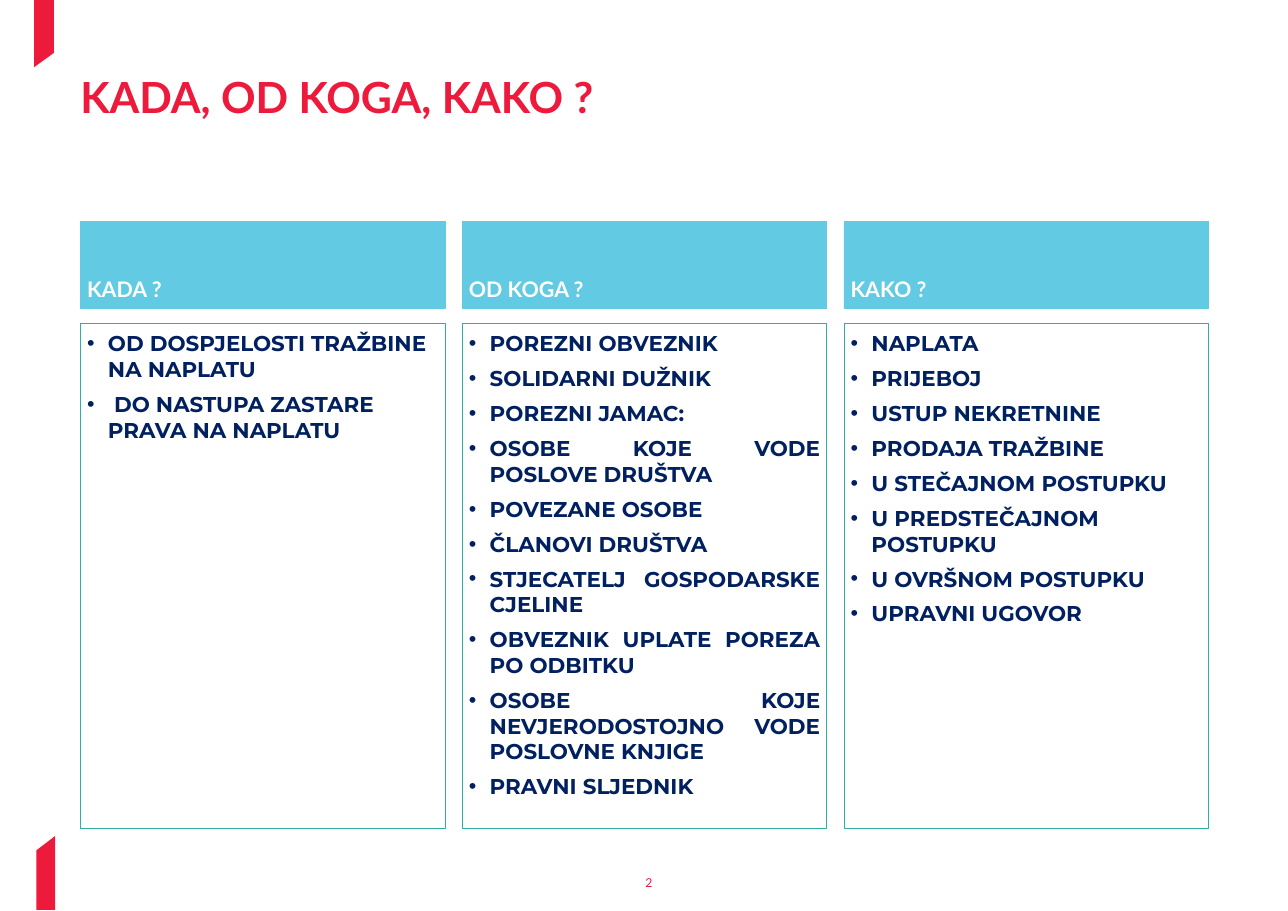
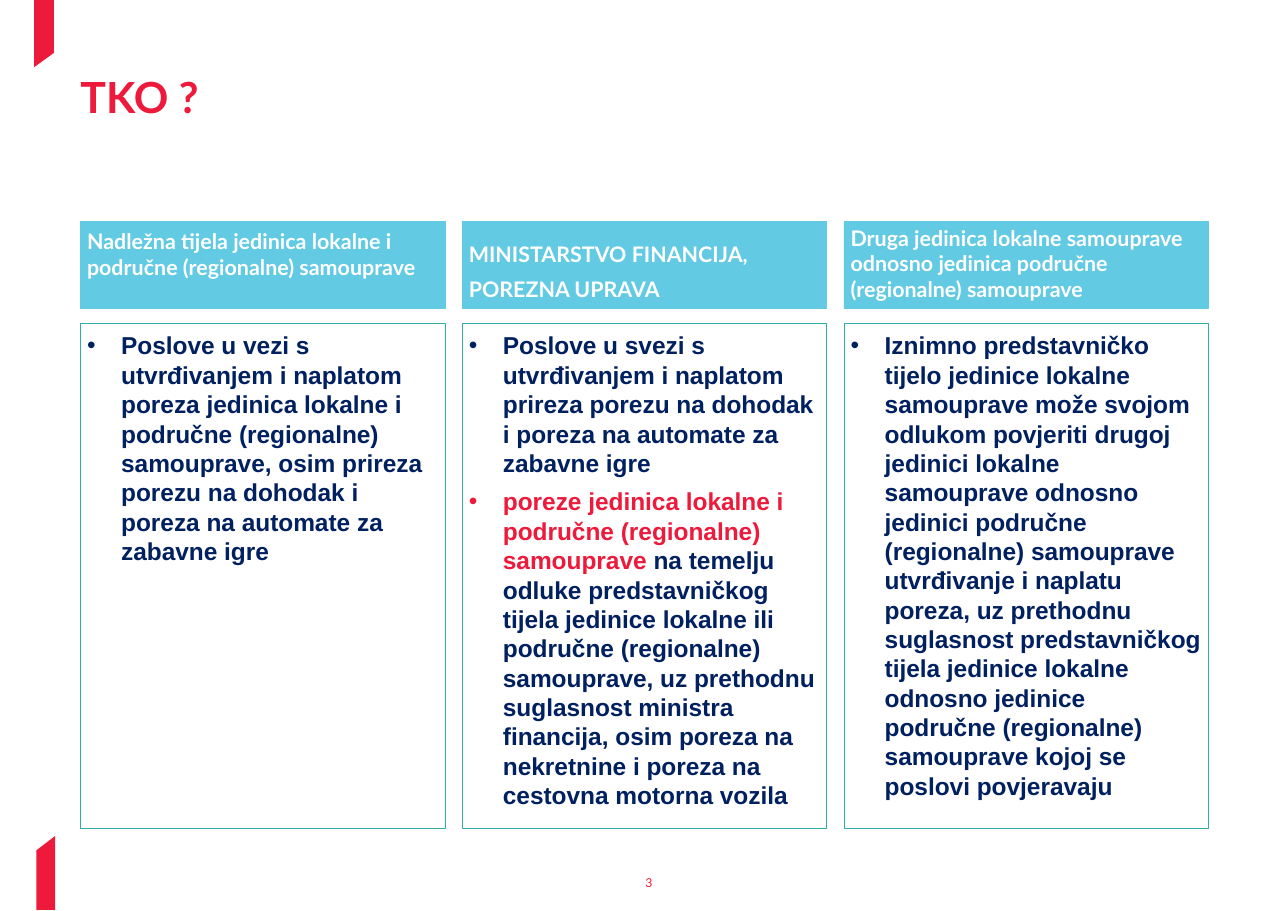
from dataclasses import dataclass

from lxml import etree
from pptx import Presentation
from pptx.dml.color import RGBColor
from pptx.enum.shapes import MSO_SHAPE
from pptx.enum.text import MSO_ANCHOR, PP_ALIGN
from pptx.oxml.ns import qn
from pptx.util import Inches, Pt

RECTANGLE = MSO_SHAPE.RECTANGLE
TOP, MIDDLE, BOTTOM = MSO_ANCHOR.TOP, MSO_ANCHOR.MIDDLE, MSO_ANCHOR.BOTTOM
LEFT, CENTER, JUSTIFY = PP_ALIGN.LEFT, PP_ALIGN.CENTER, PP_ALIGN.JUSTIFY


@dataclass(frozen=True)
class Style:
    """A font with its size, colour and weight."""
    font: str
    size: int
    color: str
    bold: bool = True


@dataclass(frozen=True)
class Theme:
    """Colours and type sizes shared by all slides."""
    red: str = "ED1A3B"
    sky: str = "62CAE3"
    teal: str = "2EB0A4"
    title: Style = Style("Lato", 28, "ED1A3B")
    header: Style = Style("Lato", 14, "FFFFFF")
    short_list: Style = Style("Montserrat", 14, "002060")
    long_list: Style = Style("Arial", 16, "002060")
    page_number: Style = Style("Lato", 8, "ED1A3B", False)
    line: float = 0.5
    space: int = 6
    inset: float = 0.06


@dataclass(frozen=True)
class Column:
    """A header and the bullets below it."""
    header: tuple
    bullets: tuple
    align: PP_ALIGN = LEFT
    anchor: MSO_ANCHOR = BOTTOM


THEME = Theme()
SLIDE_SIZE = (11.69, 8.27)
TITLE_BOX = (0.73, 0.73, 10.24, 0.38)
COLUMNS_BOX = (0.73, 2.01, 10.24, 5.51)
NUMBER_BOX = (5.82, 7.95, 0.14, 0.13)
COLUMN_GAP = 0.155
HEADER_HEIGHT = 0.79
HEADER_GAP = 0.14
MARKERS = (
    ((0.49, 0.48), (0.49, 0), (0.31, 0), (0.31, 0.61)),
    ((0.33, 7.72), (0.33, 8.26), (0.5, 8.26), (0.5, 7.59)),
)

WHEN_WHOM_HOW = (
    Column(
        ("KADA ?",),
        ("OD DOSPJELOSTI TRAŽBINE NA NAPLATU", " DO NASTUPA ZASTARE PRAVA NA NAPLATU"),
    ),
    Column(
        ("OD KOGA ?",),
        (
            "POREZNI OBVEZNIK",
            "SOLIDARNI DUŽNIK",
            "POREZNI JAMAC:",
            "OSOBE KOJE VODE POSLOVE DRUŠTVA",
            "POVEZANE OSOBE",
            "ČLANOVI DRUŠTVA",
            "STJECATELJ GOSPODARSKE CJELINE",
            "OBVEZNIK UPLATE POREZA PO ODBITKU",
            "OSOBE KOJE NEVJERODOSTOJNO VODE POSLOVNE KNJIGE",
            "PRAVNI SLJEDNIK",
        ),
        align=JUSTIFY,
    ),
    Column(
        ("KAKO ?",),
        (
            "NAPLATA",
            "PRIJEBOJ",
            "USTUP NEKRETNINE",
            "PRODAJA TRAŽBINE",
            "U STEČAJNOM POSTUPKU",
            "U PREDSTEČAJNOM POSTUPKU",
            "U OVRŠNOM POSTUPKU",
            "UPRAVNI UGOVOR",
        ),
    ),
)

WHO = (
    Column(
        ("Nadležna tijela jedinica lokalne i područne (regionalne) samouprave",),
        (
            "Poslove u vezi s utvrđivanjem i naplatom poreza jedinica lokalne i "
            "područne (regionalne) samouprave, osim prireza porezu na dohodak i "
            "poreza na automate za zabavne igre",
        ),
        anchor=TOP,
    ),
    Column(
        ("MINISTARSTVO FINANCIJA,", "POREZNA UPRAVA"),
        (
            "Poslove u svezi s utvrđivanjem i naplatom prireza porezu na dohodak i "
            "poreza na automate za zabavne igre",
            (
                ("poreze jedinica lokalne i područne (regionalne) samouprave ", THEME.red),
                (
                    "na temelju odluke predstavničkog tijela jedinice lokalne ili "
                    "područne (regionalne) samouprave, uz prethodnu suglasnost "
                    "ministra financija, osim poreza na nekretnine i poreza na "
                    "cestovna motorna vozila",
                    THEME.long_list.color,
                ),
            ),
        ),
    ),
    Column(
        ("Druga jedinica lokalne samouprave odnosno jedinica područne (regionalne) samouprave",),
        (
            "Iznimno predstavničko tijelo jedinice lokalne samouprave može svojom "
            "odlukom povjeriti drugoj jedinici lokalne samouprave odnosno jedinici "
            "područne (regionalne) samouprave utvrđivanje i naplatu poreza, uz "
            "prethodnu suglasnost predstavničkog tijela jedinice lokalne odnosno "
            "jedinice područne (regionalne) samouprave kojoj se poslovi povjeravaju",
        ),
    ),
)


def rgb(color):
    """Turn a hex string into a colour."""
    return RGBColor.from_string(color)


def add_bullet(para, indent):
    """Give a paragraph a round bullet with a hanging indent."""
    properties = para._p.get_or_add_pPr()
    properties.set("marL", str(Inches(indent)))
    properties.set("indent", str(-Inches(indent)))
    etree.SubElement(properties, qn("a:buFont")).set("typeface", "Arial")
    etree.SubElement(properties, qn("a:buChar")).set("char", "•")


def write(shape, paragraphs, style, anchor=TOP, align=LEFT, inset=0, indent=0, spacing=None):
    """Fill a shape with paragraphs given as strings or (text, colour) runs."""
    frame = shape.text_frame
    frame.word_wrap = True
    frame.vertical_anchor = anchor
    frame.margin_left = frame.margin_right = Inches(inset)
    frame.margin_top = frame.margin_bottom = Inches(inset)
    for index, content in enumerate(paragraphs):
        para = frame.add_paragraph() if index else frame.paragraphs[0]
        if indent:
            add_bullet(para, indent)
        para.alignment = align
        if index:
            para.space_before = Pt(THEME.space)
        if spacing:
            para.line_spacing = spacing
        runs = ((content, style.color),) if isinstance(content, str) else content
        for text, color in runs:
            span = para.add_run()
            span.text = text
            span.font.name = style.font
            span.font.size = Pt(style.size)
            span.font.bold = style.bold
            span.font.color.rgb = rgb(color)


def add_text(page, box, text, style, **layout):
    """Place a text box with one paragraph."""
    shape = page.shapes.add_textbox(*map(Inches, box))
    write(shape, (text,), style, **layout)
    return shape


def add_panel(page, box, line, fill=None):
    """Place a thinly outlined rectangle, filled if a colour is given."""
    panel = page.shapes.add_shape(RECTANGLE, *map(Inches, box))
    panel.shadow.inherit = False
    panel.line.color.rgb = rgb(line)
    panel.line.width = Pt(THEME.line)
    if fill:
        panel.fill.solid()
        panel.fill.fore_color.rgb = rgb(fill)
    else:
        panel.fill.background()
    return panel


def add_marker(page, points):
    """Draw one slanted red edge marker."""
    start, *rest = [tuple(map(Inches, point)) for point in points]
    builder = page.shapes.build_freeform(*start)
    builder.add_line_segments(rest, close=True)
    marker = builder.convert_to_shape()
    marker.shadow.inherit = False
    marker.fill.solid()
    marker.fill.fore_color.rgb = rgb(THEME.red)
    marker.line.fill.background()


def add_column(page, box, column, style, indent):
    """Place a header band and a bulleted panel inside the box."""
    left, top, width, height = box
    band = add_panel(page, (left, top, width, HEADER_HEIGHT), THEME.sky, THEME.sky)
    write(band, column.header, THEME.header, anchor=column.anchor, inset=THEME.inset)
    offset = HEADER_HEIGHT + HEADER_GAP
    panel = add_panel(page, (left, top + offset, width, height - offset), THEME.teal)
    write(panel, column.bullets, style, align=column.align, inset=THEME.inset, indent=indent)


def add_columns(page, box, columns, style, indent):
    """Divide the box into equal columns."""
    left, top, width, height = box
    column_width = (width - COLUMN_GAP * (len(columns) - 1)) / len(columns)
    for index, column in enumerate(columns):
        column_left = left + index * (column_width + COLUMN_GAP)
        add_column(page, (column_left, top, column_width, height), column, style, indent)


def add_page(deck, number, title, columns, style, indent):
    """Add a slide with title, columns, edge markers and page number."""
    page = deck.slides.add_slide(deck.slide_layouts[6])
    for points in MARKERS:
        add_marker(page, points)
    add_text(page, TITLE_BOX, title, THEME.title, spacing=0.8)
    add_columns(page, COLUMNS_BOX, columns, style, indent)
    add_text(page, NUMBER_BOX, str(number), THEME.page_number, anchor=MIDDLE, align=CENTER)


def main():
    """Build and save the deck."""
    deck = Presentation()
    deck.slide_width, deck.slide_height = map(Inches, SLIDE_SIZE)
    add_page(deck, 2, "KADA, OD KOGA, KAKO ?", WHEN_WHOM_HOW, THEME.short_list, 0.19)
    add_page(deck, 3, "TKO ?", WHO, THEME.long_list, 0.31)
    deck.save("out.pptx")


if __name__ == "__main__":
    main()
